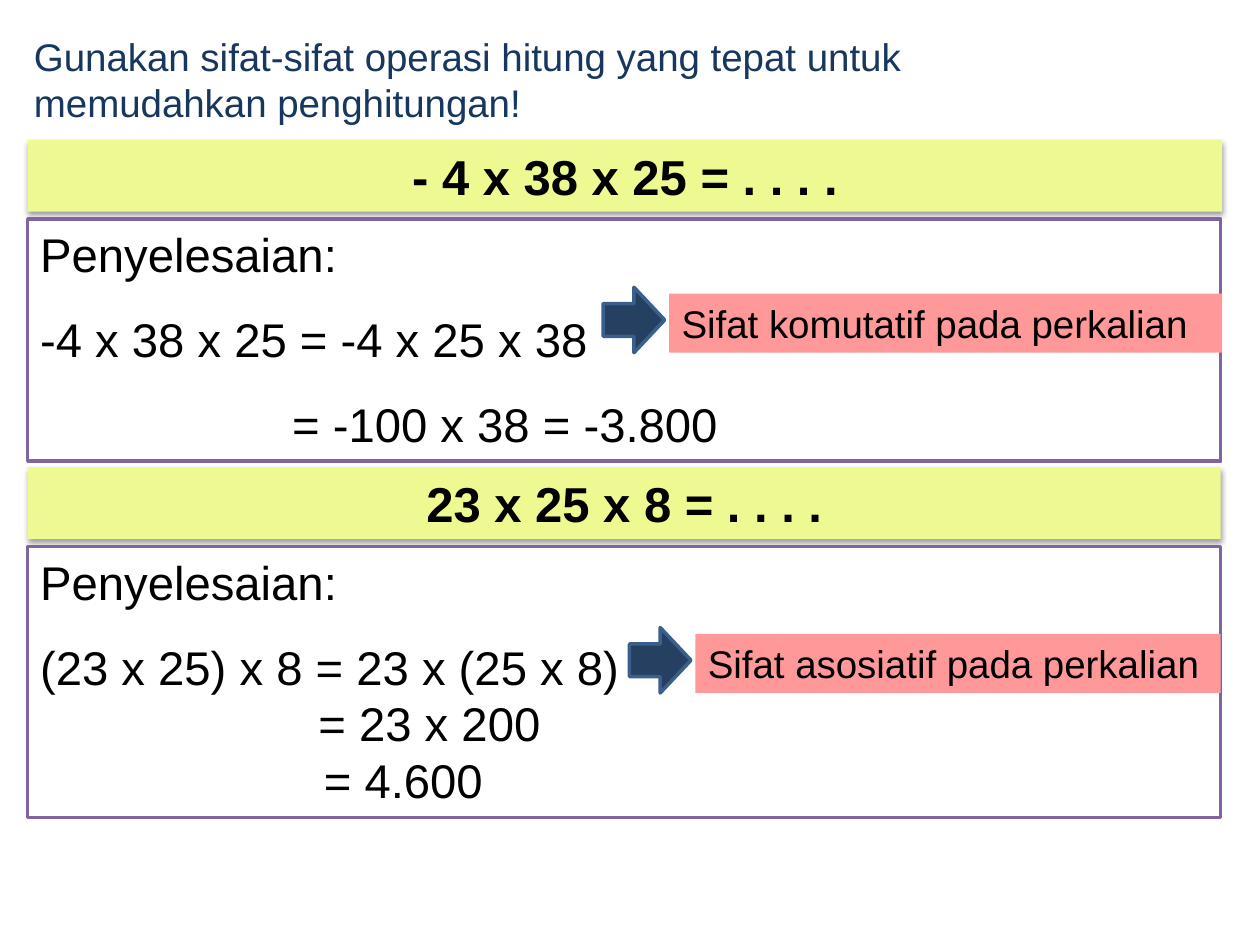
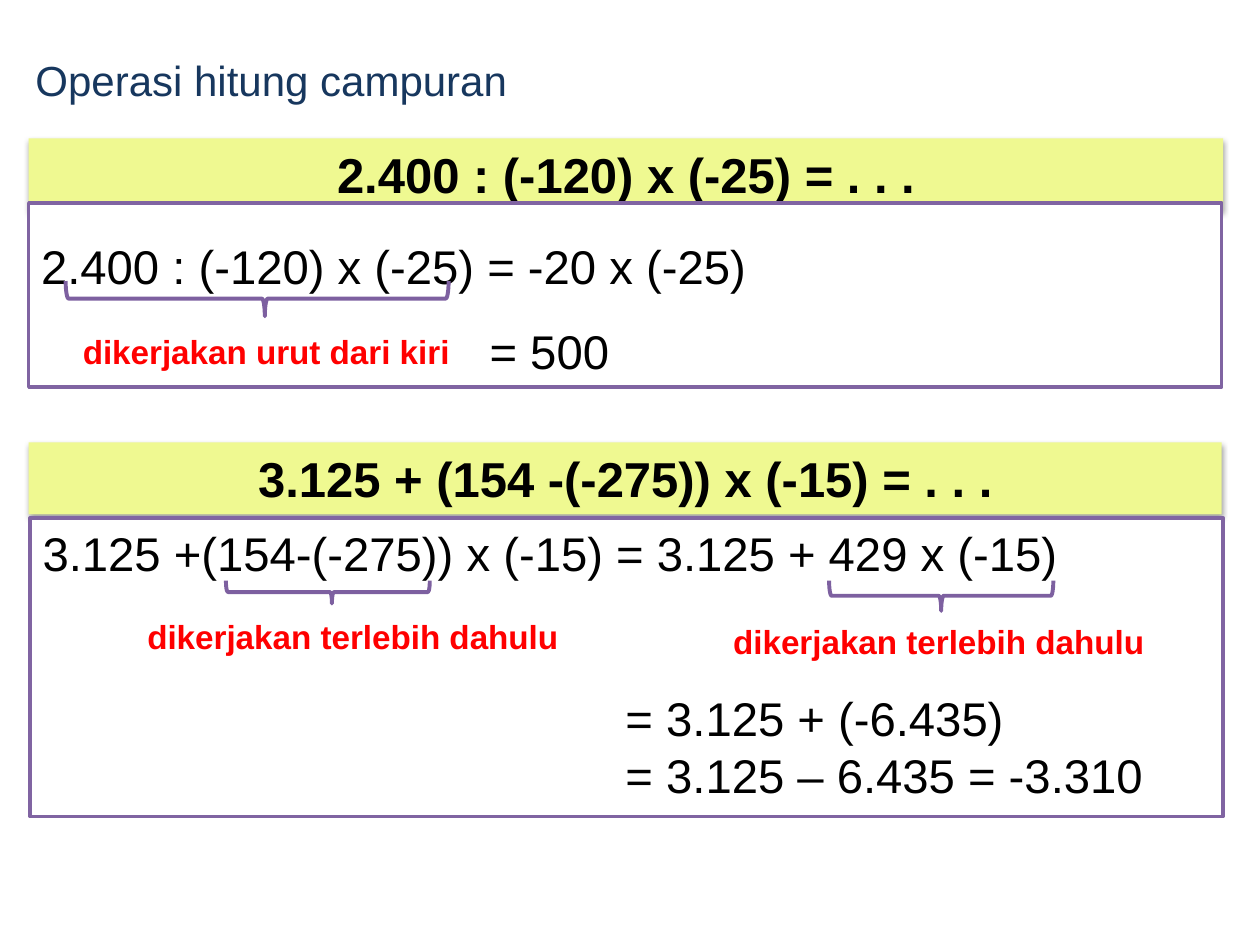
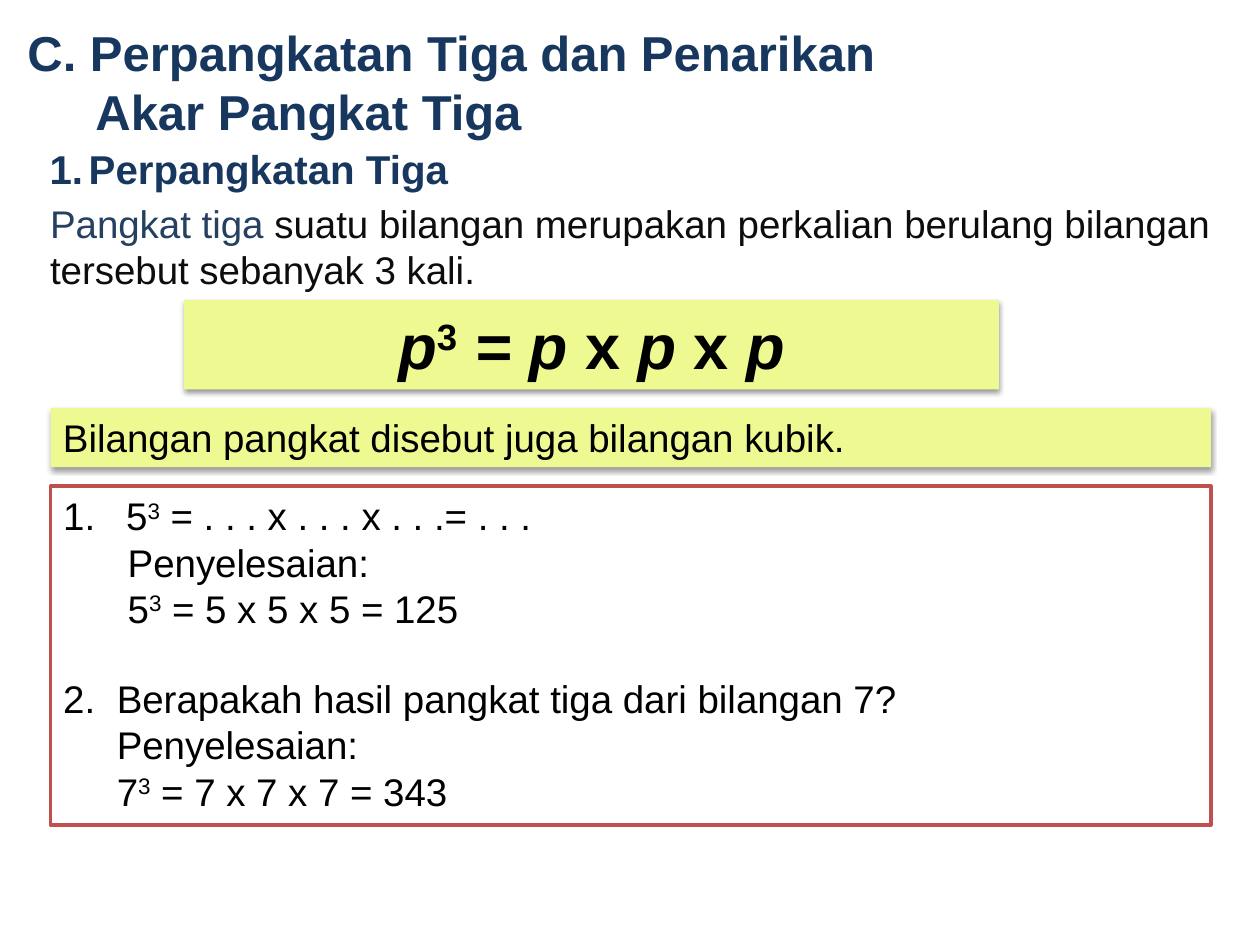
from dataclasses import dataclass, field
from typing import Optional

from lxml import etree
from pptx import Presentation
from pptx import util as u
from pptx.dml.color import RGBColor
from pptx.enum import shapes, text
from pptx.oxml.ns import qn


@dataclass(frozen=True)
class Theme:
    font: str = "Arial"
    navy: str = "17375E"
    deep_blue: str = "254061"
    arrow_edge: str = "3A5F8C"
    black: str = "000000"
    soft_black: str = "0D0D0D"
    red: str = "FF0000"
    white: str = "FFFFFF"
    lime: str = "EFF991"
    pink: str = "FF9999"
    purple: str = "8064A2"
    brace: str = "7D60A0"
    brick: str = "C0504D"
    formula_size: float = 36
    heading_size: float = 28
    work_size: float = 27
    topic_size: float = 24
    subtitle_size: float = 23
    text_size: float = 22
    note_size: float = 19
    edge: float = 2
    brace_edge: float = 2.25


THEME = Theme()


@dataclass(frozen=True)
class Box:
    left: float
    top: float
    width: float
    height: float

    def lengths(self) -> tuple:
        return tuple(u.Cm(side) for side in (self.left, self.top, self.width, self.height))


@dataclass(frozen=True)
class Style:
    size: float
    color: str = THEME.black
    bold: bool = False
    centered: bool = False


@dataclass(frozen=True)
class Piece:
    words: str
    italic: bool = False
    raised: bool = False
    color: Optional[str] = None


@dataclass(frozen=True)
class Line:
    pieces: tuple
    indent: float = 0
    hanging: float = 0
    spacing: float = 1
    before: float = 0
    number: int = 0


@dataclass(frozen=True)
class Look:
    fill: Optional[str] = None
    line: Optional[str] = None
    line_width: float = THEME.edge
    shadow: bool = False


@dataclass(frozen=True)
class Problem:
    question: str
    band: Box
    panel: Box
    work: list = field(default_factory=list)


@dataclass(frozen=True)
class Note:
    words: str
    box: Box
    brace: Box
    tip: float = 0.52


BAND_STYLE = Style(THEME.heading_size, bold=True, centered=True)
WORK_STYLE = Style(THEME.work_size)
TEXT_STYLE = Style(THEME.text_size)
NOTE_STYLE = Style(THEME.note_size, THEME.red, bold=True)
BAND = Look(THEME.lime, shadow=True)
PANEL = Look(THEME.white, THEME.purple)
ARROW = Look(THEME.deep_blue, THEME.arrow_edge)
BRACE = Look(None, THEME.brace, THEME.brace_edge)


def line(words: str, **layout) -> Line:
    return Line((Piece(words),), **layout)


def cube(base: str, rest: str, **layout) -> Line:
    return Line((Piece(base), Piece("3", raised=True), Piece(rest)), **layout)


def write(shape, lines: list, style: Style, wrap: bool = True) -> None:
    frame = shape.text_frame
    frame.word_wrap = wrap
    frame.auto_size = text.MSO_AUTO_SIZE.NONE
    frame.vertical_anchor = text.MSO_ANCHOR.TOP
    for index, item in enumerate(lines):
        paragraph = frame.paragraphs[0] if index == 0 else frame.add_paragraph()
        properties = paragraph._p.get_or_add_pPr()
        properties.set("marL", str(u.Cm(item.indent)))
        properties.set("indent", str(-u.Cm(item.hanging)))
        if item.number:
            bullet = etree.SubElement(properties, qn("a:buAutoNum"), type="arabicPeriod")
            if item.number > 1:
                bullet.set("startAt", str(item.number))
        else:
            etree.SubElement(properties, qn("a:buNone"))
        paragraph.alignment = text.PP_ALIGN.CENTER if style.centered else text.PP_ALIGN.LEFT
        paragraph.line_spacing = float(item.spacing)
        paragraph.space_before = u.Pt(item.before)
        for piece in item.pieces:
            run = paragraph.add_run()
            run.text = piece.words
            run.font.name = THEME.font
            run.font.size = u.Pt(style.size)
            run.font.bold = style.bold
            run.font.italic = piece.italic
            run.font.color.rgb = RGBColor.from_string(piece.color or style.color)
            if piece.raised:
                run._r.get_or_add_rPr().set("baseline", "30000")


def paint(shape, look: Look) -> None:
    if look.fill:
        shape.fill.solid()
        shape.fill.fore_color.rgb = RGBColor.from_string(look.fill)
    else:
        shape.fill.background()
    if look.line:
        shape.line.color.rgb = RGBColor.from_string(look.line)
        shape.line.width = u.Pt(look.line_width)
    else:
        shape.line.fill.background()
    shape.shadow.inherit = False
    if look.shadow:
        effects = shape.element.spPr.find(qn("a:effectLst"))
        shadow = etree.SubElement(effects, qn("a:outerShdw"), blurRad="40000",
                                  dist="20000", dir="5400000", rotWithShape="0")
        color = etree.SubElement(shadow, qn("a:srgbClr"), val=THEME.black)
        etree.SubElement(color, qn("a:alpha"), val="38000")


def place(shape, box: Box) -> None:
    shape.left, shape.top, shape.width, shape.height = box.lengths()


def add_box(slide, box: Box, look: Look, lines: list, style: Style) -> None:
    shape = slide.shapes.add_shape(shapes.MSO_SHAPE.RECTANGLE, *box.lengths())
    paint(shape, look)
    write(shape, lines, style)


def add_turned(slide, kind: shapes.MSO_SHAPE, box: Box, look: Look):
    shape = slide.shapes.add_shape(kind, *box.lengths())
    shape.rotation = 270
    paint(shape, look)
    return shape


def add_text(slide, box: Box, lines: list, style: Style, wrap: bool = True) -> None:
    write(slide.shapes.add_textbox(*box.lengths()), lines, style, wrap)


def add_slide(presentation, layout: int, box: Box, lines: list, style: Style):
    slide = presentation.slides.add_slide(presentation.slide_layouts[layout])
    place(slide.shapes.title, box)
    write(slide.shapes.title, lines, style)
    return slide


def add_problem(slide, problem: Problem) -> None:
    add_box(slide, problem.band, BAND, [line(problem.question)], BAND_STYLE)
    add_box(slide, problem.panel, PANEL, problem.work, WORK_STYLE)


def add_property(slide, words: str, box: Box) -> None:
    add_box(slide, box, Look(THEME.pink), [line(words)], TEXT_STYLE)
    arrow = Box(box.left - 1.37, box.top - 0.09, 1.32, 1.24)
    add_turned(slide, shapes.MSO_SHAPE.DOWN_ARROW, arrow, ARROW)


def add_note(slide, note: Note) -> None:
    add_text(slide, note.box, [line(note.words)], NOTE_STYLE, wrap=False)
    brace = add_turned(slide, shapes.MSO_SHAPE.LEFT_BRACE, note.brace, BRACE)
    brace.adjustments[0] = 0.083
    brace.adjustments[1] = note.tip


def build_properties(presentation) -> None:
    slide = add_slide(
        presentation, 5, Box(-0.03, 0.53, 23.27, 2.13),
        [line("Gunakan sifat-sifat operasi hitung yang tepat untuk memudahkan penghitungan!",
              indent=0.46)],
        Style(THEME.text_size, THEME.navy))
    add_problem(slide, Problem(
        "- 4 x 38 x 25 = . . . .",
        Box(0.56, 2.82, 24.08, 1.45), Box(0.56, 4.42, 24.05, 4.88),
        [line("Penyelesaian:"),
         line("-4 x 38 x 25 = -4 x 25 x 38", spacing=1.5),
         line("= -100 x 38 = -3.800", indent=5.08, spacing=1.5)]))
    add_property(slide, "Sifat komutatif pada perkalian", Box(13.49, 5.92, 11.15, 1.19))
    add_problem(slide, Problem(
        "23 x 25 x 8 = . . . .",
        Box(0.56, 9.42, 24.05, 1.45), Box(0.56, 11.02, 24.05, 5.46),
        [line("Penyelesaian:"),
         line("(23 x 25) x 8 = 23 x (25 x 8)", spacing=1.5),
         line("= 23 x 200", indent=5.61),
         line("= 4.600", indent=5.72)]))
    add_property(slide, "Sifat asosiatif pada perkalian", Box(14.02, 12.78, 10.59, 1.19))


def build_mixed_operations(presentation) -> None:
    slide = add_slide(
        presentation, 5, Box(0, 0.97, 23.27, 1.27),
        [line("Operasi hitung campuran", indent=0.46)],
        Style(THEME.topic_size, THEME.navy))
    add_problem(slide, Problem(
        "2.400 : (-120) x (-25) = . . .",
        Box(0.58, 2.79, 24.08, 1.45), Box(0.58, 4.09, 24.05, 3.71),
        [line("2.400 : (-120) x (-25) = -20 x (-25)", spacing=1.5),
         line("= 500", indent=9.04, spacing=1.5)]))
    add_problem(slide, Problem(
        "3.125 + (154 -(-275)) x (-15) = . . .",
        Box(0.58, 8.92, 24.05, 1.45), Box(0.61, 10.44, 24.05, 6.02),
        [line("3.125 +(154-(-275)) x (-15) = 3.125 + 429 x (-15)"),
         line("= 3.125 + (-6.435)", indent=11.75, before=62),
         line("= 3.125 – 6.435 = -3.310", indent=11.75)]))
    first = "dikerjakan terlebih dahulu"
    for note in (
        Note("dikerjakan urut dari kiri", Box(1.42, 6.55, 8, 1.07), Box(4.83, 2.16, 0.71, 7.72)),
        Note(first, Box(2.72, 12.29, 8.92, 1.07), Box(6.38, 9.88, 0.46, 4.11)),
        Note(first, Box(14.53, 12.4, 8.92, 1.07), Box(18.67, 9.75, 0.61, 4.52), 0.5),
    ):
        add_note(slide, note)


def build_cubes(presentation) -> None:
    slide = add_slide(
        presentation, 1, Box(0.3, 0.33, 22.4, 2.64),
        [line("C. Perpangkatan Tiga dan Penarikan"), line("Akar Pangkat Tiga", indent=1.37)],
        Style(THEME.heading_size, THEME.navy, bold=True))
    add_text(slide, Box(0.3, 2.79, 9.91, 1.27),
             [line("Perpangkatan Tiga", indent=1.24, hanging=0.79, number=1)],
             Style(THEME.subtitle_size, THEME.navy, bold=True))
    definition = Line((
        Piece("Pangkat tiga ", color=THEME.deep_blue),
        Piece("suatu bilangan merupakan perkalian berulang bilangan tersebut sebanyak 3 kali.",
              color=THEME.soft_black)))
    add_box(slide, Box(0.76, 3.91, 23.95, 2.13), Look(THEME.white), [definition], TEXT_STYLE)

    examples = slide.placeholders[1]
    place(examples, Box(1.02, 9.8, 23.39, 6.83))
    paint(examples, Look(THEME.white, THEME.brick))
    write(examples, [
        cube("5", " = . . . x . . . x . . .= . . .", indent=1.27, hanging=1.27, number=1),
        line("Penyelesaian:", indent=1.3),
        cube("5", " = 5 x 5 x 5 = 125", indent=1.3),
        line("Berapakah hasil pangkat tiga dari bilangan 7?",
             indent=1.08, hanging=1.08, before=25.3, number=2),
        line("Penyelesaian:", indent=1.08),
        cube("7", " = 7 x 7 x 7 = 343", indent=1.08),
    ], TEXT_STYLE)

    add_box(slide, Box(1.02, 8.23, 23.39, 1.19), BAND,
            [line("Bilangan pangkat disebut juga bilangan kubik.")], TEXT_STYLE)
    formula = Line((
        Piece("p", italic=True), Piece("3", raised=True), Piece(" = p ", italic=True),
        Piece("x"), Piece(" p ", italic=True), Piece("x"), Piece(" p", italic=True)))
    add_box(slide, Box(3.71, 6.05, 16.43, 1.8), BAND, [formula],
            Style(THEME.formula_size, bold=True, centered=True))


def main() -> None:
    presentation = Presentation()
    presentation.slide_width = u.Cm(25.4)
    presentation.slide_height = u.Cm(19.05)
    build_properties(presentation)
    build_mixed_operations(presentation)
    build_cubes(presentation)
    presentation.save("out.pptx")


if __name__ == "__main__":
    main()
